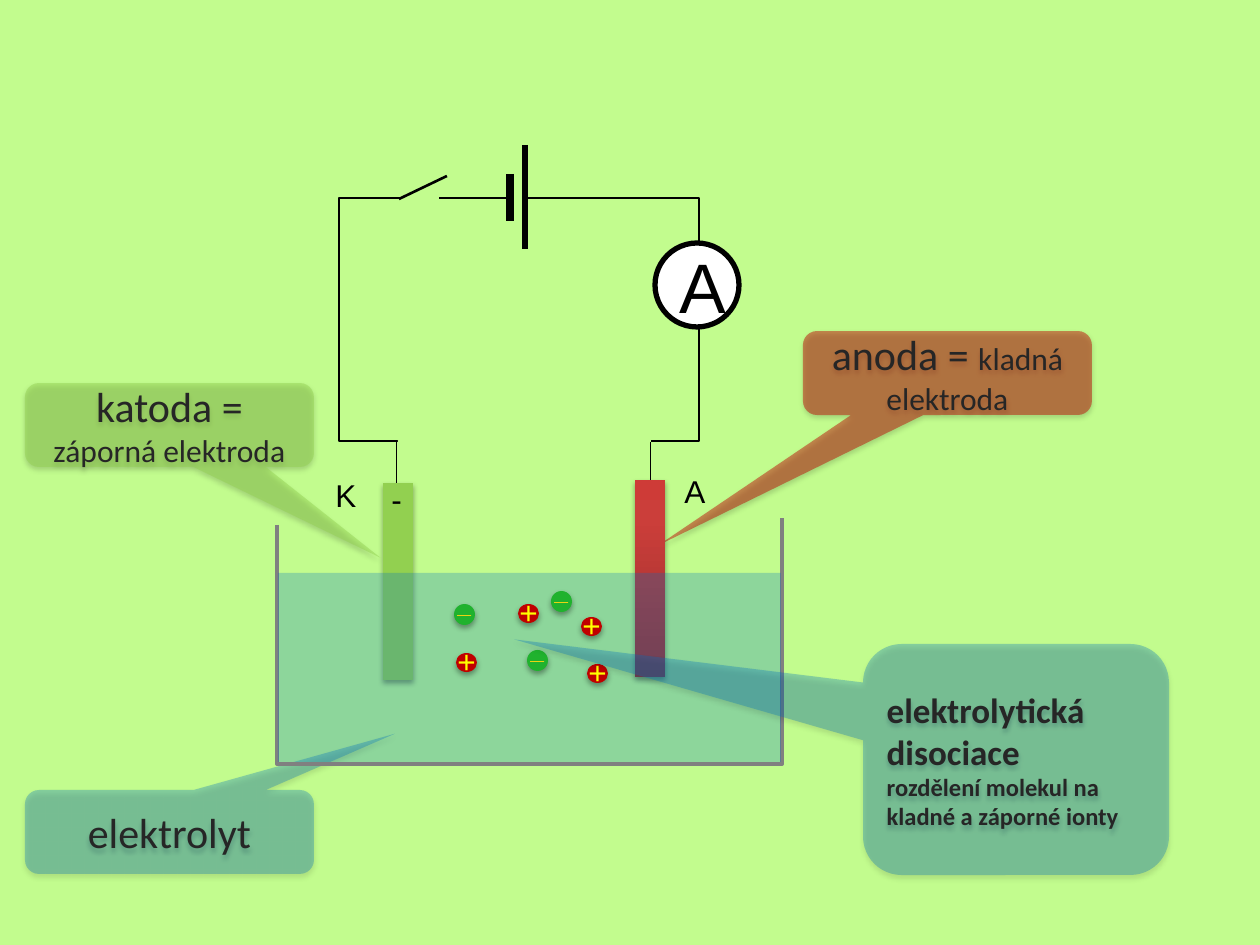
from copy import deepcopy
from lxml import etree
from pptx import Presentation
from pptx.dml.color import RGBColor
from pptx.enum.shapes import MSO_CONNECTOR, MSO_SHAPE as SHAPE
from pptx.enum.text import MSO_ANCHOR as ANCHOR, MSO_AUTO_SIZE as AUTO, PP_ALIGN as ALIGN
from pptx.oxml import parse_xml
from pptx.oxml.ns import nsdecls, qn
from pptx.util import Pt

SCALE = 914400 / 126
BG, BLACK, INK, BLUE, GREEN, RED = "C2FC8E", "000000", "262626", "0070C0", "92D050", "C00000"
BREAK = None

CALLOUTS = [
    ((25, 790, 289, 84), (0.78, -1.17), BLUE, 31, ALIGN.CENTER, [("elektrolyt", 24, False)]),
    ((25, 383, 289, 84), (0.73, 1.58), GREEN, 46, ALIGN.CENTER,
     [("katoda = ", 24, False), ("záporná elektroda", 18, False)]),
    ((803, 331, 289, 84), (-1, 2.05), RED, 46, ALIGN.CENTER,
     [("anoda = ", 24, False), ("kladná elektroda", 18, False)]),
]
DISSOCIATION = ((863, 644, 306, 231), (-1.64, -0.52), BLUE, 31, ALIGN.LEFT,
                [("elektrolytická disociace", 20, True), BREAK,
                 ("rozdělení molekul na kladné a záporné ionty", 14, True)])
CIRCUIT = (339, 198, 360, 243)
GAPS = [(513, 170, 11, 63), (398, 402, 253, 66)]
SHORT_PLATE = ((510, 174), (510, 221), 4.5)
LONG_PLATE = ((525, 145), (525, 249), 3)
LEADS = [((396, 441), (396, 537), 0.5), ((650, 442), (650, 537), 0.5)]
SWITCH_GAP = (403, 194, 34, 16)
SWITCH = ((399, 199), (447, 176), 1.5)
AMMETER, AMMETER_TEXT = (655, 243, 84, 84), (667, 237, 53, 72)
CATHODE, ANODE = (383, 483, 30, 197), (635, 480, 30, 197)
ANODE_STOPS = [(0, "9C2F2D"), (0.8, "CB3E3A"), (1, "CE3B37")]
LABELS = [("K", (323, 470, 47, 50)), ("A", (672, 466, 47, 50)), ("-", (379, 474, 37, 50))]
VESSEL = [(277, 525), (277, 764), (782, 764), (782, 518)]
LIQUID = (278, 573, 503, 189)
ION_KINDS = {
    "+": dict(size=(21, 19), color=RED, box=(-11, -17, 42, 50),
              text=dict(size=18, color="FFFF00")),
    "_": dict(size=(21, 21), color="20B22E", box=(-9, -21, 49, 43),
              text=dict(size=14, color="F7D611", bold=True, wrap=True)),
}
IONS = [("+", 456, 653), ("+", 581, 617), ("_", 527, 650), ("+", 587, 664),
        ("_", 454, 604), ("+", 518, 604), ("_", 551, 591)]


def px(*values):
    return [round(v * SCALE) for v in values]


def rgb(color):
    return RGBColor.from_string(color)


def add_effects(sp, shadow=False):
    inner = ('<a:outerShdw blurRad="39370" dist="22860" dir="5400000" rotWithShape="0">'
             '<a:srgbClr val="000000"><a:alpha val="35000"/></a:srgbClr></a:outerShdw>')
    xml = f'<a:effectLst {nsdecls("a")}>{inner if shadow else ""}</a:effectLst>'
    sp._element.spPr.append(parse_xml(xml))


def style(sp, fill=None, alpha=None, line=None, width=1, shadow=False):
    if fill:
        sp.fill.solid()
        sp.fill.fore_color.rgb = rgb(fill)
        if alpha:
            clr = sp._element.spPr.find(qn("a:solidFill"))[0]
            etree.SubElement(clr, qn("a:alpha")).set("val", str(alpha * 1000))
    else:
        sp.fill.background()
    if line:
        sp.line.color.rgb = rgb(line)
        sp.line.width = Pt(width)
    else:
        sp.line.fill.background()
    add_effects(sp, shadow)
    return sp


def add_shape(shapes, kind, box, **look):
    return style(shapes.add_shape(kind, *px(*box)), **look)


def add_line(shapes, start, end, width):
    s = shapes.add_connector(MSO_CONNECTOR.STRAIGHT, *px(*start, *end))
    s.line.color.rgb = rgb(BLACK)
    s.line.width = Pt(width)
    add_effects(s)


def add_run(p, text, size, color, name, bold=False):
    r = p.add_run()
    r.text = text
    r.font.color.rgb = rgb(color)
    for key, value in dict(size=Pt(size), name=name, bold=bold).items():
        setattr(r.font, key, value)


def add_text(shapes, text, box, size=18, color=BLACK, bold=False, wrap=False):
    tf = shapes.add_textbox(*px(*box)).text_frame
    tf.word_wrap, tf.auto_size = wrap, AUTO.SHAPE_TO_FIT_TEXT
    add_run(tf.paragraphs[0], text, size, color, "Arial", bold)


def add_callout(shapes, box, tip, color, alpha, align, runs):
    s = add_shape(shapes, SHAPE.ROUNDED_RECTANGULAR_CALLOUT, box,
                  fill=color, alpha=alpha, shadow=True)
    s.adjustments[0], s.adjustments[1] = tip
    tf = s.text_frame
    tf.word_wrap, tf.vertical_anchor = True, ANCHOR.MIDDLE
    p = tf.paragraphs[0]
    p.alignment = align
    for run in runs:
        if run is BREAK:
            p.add_line_break()
        else:
            text, size, bold = run
            add_run(p, text, size, INK, "Calibri", bold)


def add_anode(shapes):
    s = add_shape(shapes, SHAPE.RECTANGLE, ANODE, shadow=True)
    s.fill.gradient()
    s.fill.gradient_angle = 90
    stops = s._element.spPr.find(".//" + qn("a:gsLst"))
    stops.append(deepcopy(stops[0]))
    for stop, (position, color) in zip(s.fill.gradient_stops, ANODE_STOPS):
        stop.position = position
        stop.color.rgb = rgb(color)


def add_ion(shapes, sign, x, y):
    kind = ION_KINDS[sign]
    group = shapes.add_group_shape().shapes
    add_shape(group, SHAPE.OVAL, (x, y, *kind["size"]), fill=kind["color"], shadow=True)
    dx, dy, w, h = kind["box"]
    add_text(group, sign, (x + dx, y + dy, w, h), **kind["text"])


def add_vessel(shapes):
    builder = shapes.build_freeform(*VESSEL[0], scale=SCALE)
    builder.add_line_segments(VESSEL[1:], close=False)
    style(builder.convert_to_shape(), line="808080", width=2.25)
    add_shape(shapes, SHAPE.RECTANGLE, LIQUID, fill=BLUE, alpha=27)


def add_circuit(shapes):
    add_shape(shapes, SHAPE.RECTANGLE, CIRCUIT, line=BLACK)
    for gap in GAPS:
        add_shape(shapes, SHAPE.RECTANGLE, gap, fill=BG)
    group = shapes.add_group_shape().shapes
    add_shape(group, SHAPE.OVAL, AMMETER, fill="FFFFFF", line=BLACK, width=3)
    add_text(group, "A", AMMETER_TEXT, size=40)
    for line in [SHORT_PLATE, *LEADS]:
        add_line(shapes, *line)


def main():
    """Build the electrolysis slide."""
    prs = Presentation()
    prs.slide_width, prs.slide_height = px(1260, 945)
    slide = prs.slides.add_slide(prs.slide_layouts[6])
    slide.background.fill.solid()
    slide.background.fill.fore_color.rgb = rgb(BG)
    shapes = slide.shapes
    for callout in CALLOUTS:
        add_callout(shapes, *callout)
    add_circuit(shapes)
    add_shape(shapes, SHAPE.RECTANGLE, CATHODE, fill=GREEN, shadow=True)
    add_anode(shapes)
    for text, box in LABELS:
        add_text(shapes, text, box)
    add_vessel(shapes)
    add_shape(shapes, SHAPE.RECTANGLE, SWITCH_GAP, fill=BG, line=BG, width=2)
    add_line(shapes, *SWITCH)
    for ion in IONS:
        add_ion(shapes, *ion)
    add_callout(shapes, *DISSOCIATION)
    add_line(shapes, *LONG_PLATE)
    prs.save("out.pptx")


if __name__ == "__main__":
    main()
